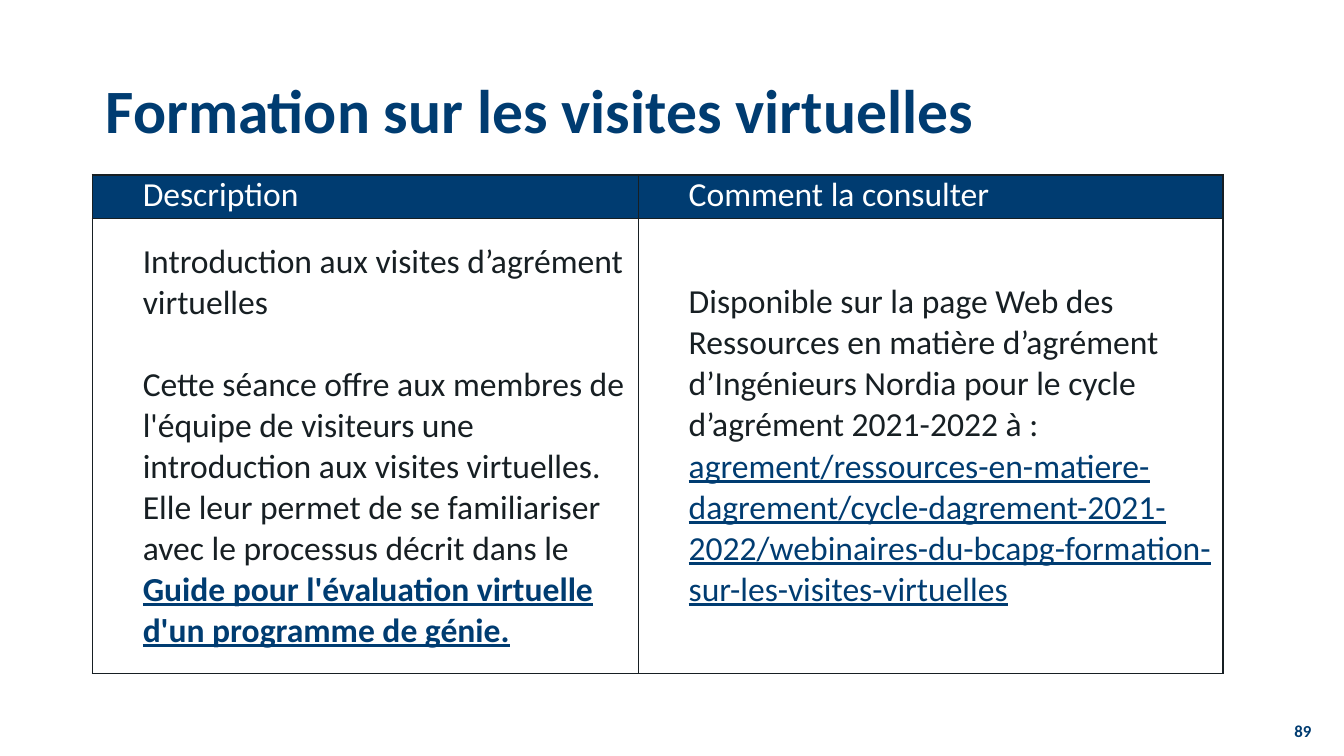
from lxml.etree import SubElement
from pptx import Presentation
from pptx.dml.color import RGBColor
from pptx.enum.text import MSO_ANCHOR, PP_ALIGN
from pptx.oxml.ns import qn
from pptx.util import Pt

PX = 5715  # EMU per px, 160 px to the inch
COLORS = {"navy": "003C71", "ink": "171F23", "white": "FFFFFF"}
FONT = "Calibri"

HEADINGS = ["Description", "Comment la consulter"]
DESCRIPTION = [
    [("Introduction aux visites d’agrément virtuelles", {})],
    [("Cette séance offre aux membres de l'équipe de visiteurs une introduction "
      "aux visites virtuelles. Elle leur permet de se familiariser avec le "
      "processus décrit dans le ", {}),
     ("Guide pour l'évaluation virtuelle d'un programme de génie.",
      {"color": "navy", "bold": True, "underline": True})],
]
ACCESS = [
    [("Disponible sur la page Web des Ressources en matière d’agrément "
      "d’Ingénieurs Nordia pour le cycle d’agrément 2021-2022 à : ", {}),
     ("agrement/ressources-en-matiere-dagrement/cycle-dagrement-2021-2022/"
      "webinaires-du-bcapg-formation-sur-les-visites-virtuelles",
      {"color": "navy", "underline": True})],
]


def px(length):
    return length * PX


def rgb(name):
    return RGBColor.from_string(COLORS[name])


def add_text(paragraph, text, size=18, color="ink", bold=False, underline=False):
    run = paragraph.add_run()
    run.text = text
    font = run.font
    font.name, font.size, font.bold = FONT, Pt(size), bold
    font.underline = underline
    font.color.rgb = rgb(color)


def add_label(slide, box, text, align=PP_ALIGN.LEFT, line_spacing=1.0, **style):
    frame = slide.shapes.add_textbox(*map(px, box)).text_frame
    frame.word_wrap = True
    frame.vertical_anchor = MSO_ANCHOR.MIDDLE
    paragraph = frame.paragraphs[0]
    paragraph.alignment = align
    paragraph.line_spacing = line_spacing
    add_text(paragraph, text, **style)


def add_borders(cell, color="ink", width=1):
    properties = cell._tc.get_or_add_tcPr()
    for position, side in enumerate(("lnL", "lnR", "lnT", "lnB")):
        line = SubElement(properties, qn(f"a:{side}"), w=str(Pt(width)))
        fill = SubElement(line, qn("a:solidFill"))
        SubElement(fill, qn("a:srgbClr"), val=COLORS[color])
        properties.insert(position, line)  # borders come before the fill


def fill_cell(cell, paragraphs, fill="white", top=0, anchor=MSO_ANCHOR.TOP):
    cell.margin_left, cell.margin_top = px(60), px(top)
    cell.margin_right = cell.margin_bottom = 0
    cell.vertical_anchor = anchor
    cell.fill.solid()
    cell.fill.fore_color.rgb = rgb(fill)
    add_borders(cell)
    for index, runs in enumerate(paragraphs):
        if index == 0:
            paragraph = cell.text_frame.paragraphs[0]
        else:
            paragraph = cell.text_frame.add_paragraph()
            paragraph.space_before = Pt(22)
        for text, style in runs:
            add_text(paragraph, text, **style)


def add_training_table(slide, box, left_width, header_height):
    width, height = box[2:]
    table = slide.shapes.add_table(2, 2, *map(px, box)).table
    for column, size in zip(table.columns, (left_width, width - left_width)):
        column.width = px(size)
    for row, size in zip(table.rows, (header_height, height - header_height)):
        row.height = px(size)

    # Header row
    for column, heading in enumerate(HEADINGS):
        fill_cell(table.cell(0, column), [[(heading, {"color": "white"})]], fill="navy")

    # Content row
    fill_cell(table.cell(1, 0), DESCRIPTION, top=27)
    fill_cell(table.cell(1, 1), ACCESS, anchor=MSO_ANCHOR.MIDDLE)


def build_training_slide(presentation):
    slide = presentation.slides.add_slide(presentation.slide_layouts[6])
    # Title
    add_label(slide, (110, 48, 1379, 174), "Formation sur les visites virtuelles",
              line_spacing=0.9, size=33, color="navy", bold=True)
    # Training table
    add_training_table(slide, (110, 208, 1346, 594), left_width=650, header_height=52)
    # Slide number
    add_label(slide, (1519, 857, 58, 26), "89", align=PP_ALIGN.RIGHT,
              size=9, color="navy", bold=True)


def main():
    presentation = Presentation()
    presentation.slide_width, presentation.slide_height = px(1600), px(900)
    build_training_slide(presentation)
    presentation.save("out.pptx")


if __name__ == "__main__":
    main()
